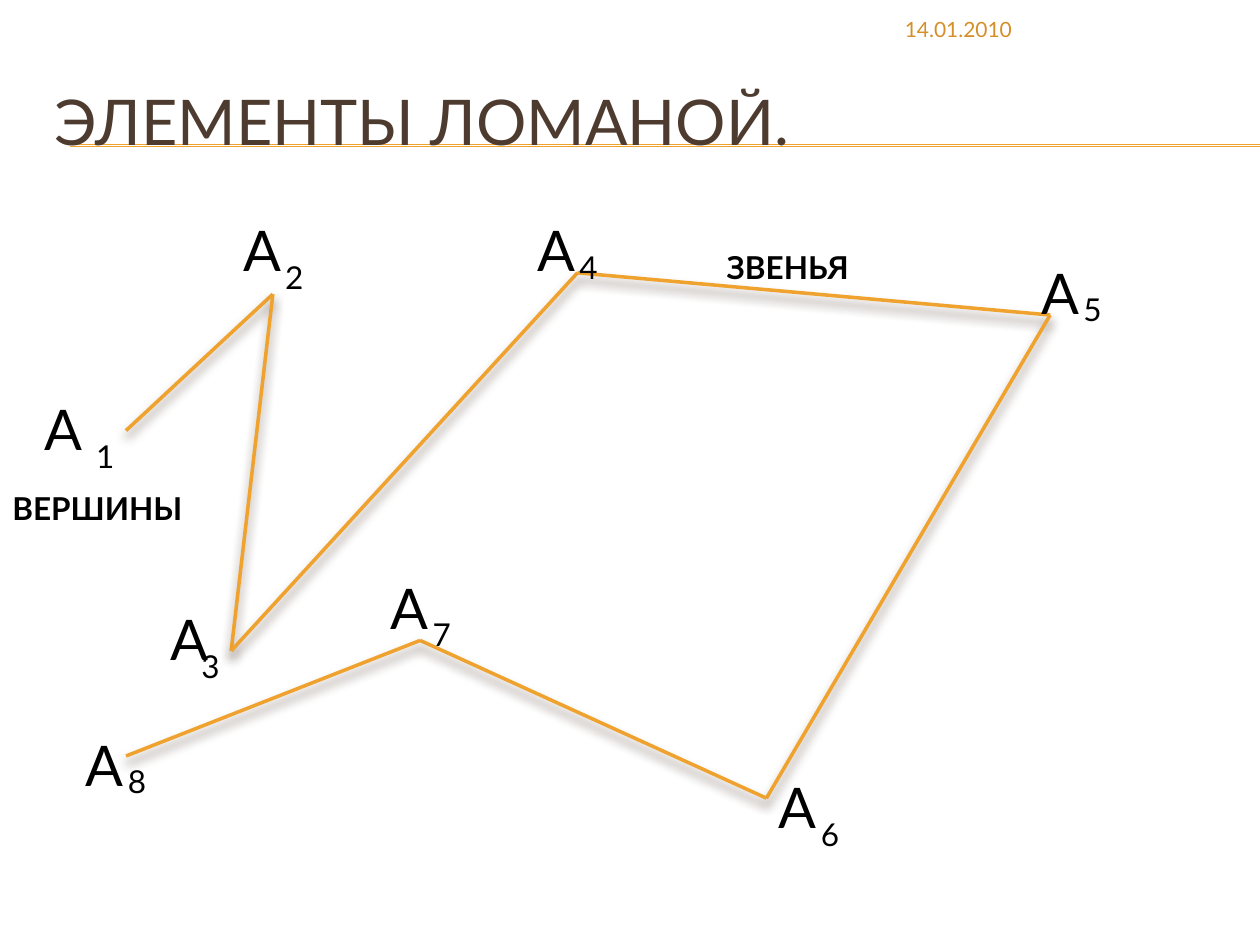
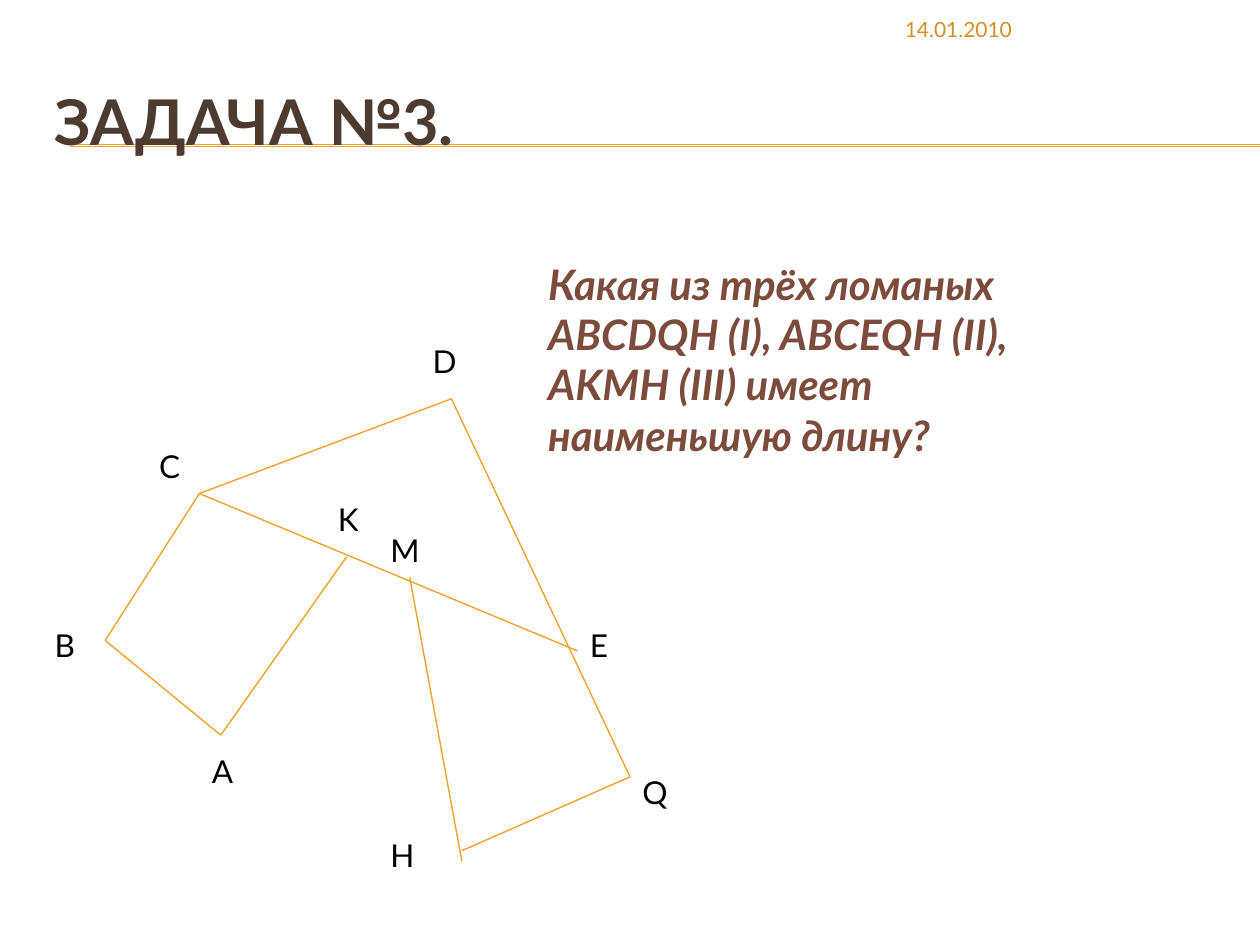
from itertools import pairwise

from lxml.etree import SubElement
from pptx import Presentation
from pptx.dml.color import RGBColor
from pptx.enum.shapes import MSO_CONNECTOR as Connector
from pptx.enum.text import MSO_ANCHOR as Anchor, MSO_AUTO_SIZE as AutoSize
from pptx.oxml.ns import qn
from pptx.util import Cm, Pt

FONT = "Lato"
ORANGE, DARK_ORANGE = "F0A22E", "D48F29"
BROWN, RED_BROWN, BLACK = "4E3B30", "7C4B3B", "000000"

DATE = "14.01.2010"
RULE_LEFT, RULE_RIGHT, RULE_HEIGHTS = 1.42, 25.4, (2.92, 2.95)

# name, vertex, letter corner, index corner, index width
POLYLINE = [
    ("1", (2.54, 8.68), (0.64, 7.83), (1.69, 8.68), 1.48),
    ("2", (5.5, 5.93), (4.66, 4.23), (5.5, 5.08), 1.69),
    ("3", (4.66, 13.12), (3.18, 12.07), (3.81, 12.91), 1.06),
    ("4", (11.64, 5.5), (10.58, 4.23), (11.43, 4.87), 1.27),
    ("5", (21.17, 6.35), (20.74, 5.08), (21.59, 5.72), 1.48),
    ("6", (15.45, 16.09), (15.45, 15.45), (16.3, 16.3), 1.91),
    ("7", (8.47, 12.91), (7.62, 11.43), (8.47, 12.28), 1.27),
    ("8", (2.54, 15.24), (1.48, 14.61), (2.33, 15.24), 1.48),
]
CAPTIONS = [("ЗВЕНЬЯ", 14.4, 4.87, 4.01), ("ВЕРШИНЫ", 0, 9.73, 4.65)]

TASK_POINTS = {
    "A": (4.45, 14.82), "B": (2.12, 12.91), "C": (4.02, 9.95),
    "D": (9.1, 8.04), "Q": (12.7, 15.66), "H": (9.31, 17.15),
    "H end": (9.31, 17.36), "M": (8.26, 11.64), "K": (6.99, 11.22),
    "E": (11.64, 13.12),
}
TASK_CHAINS = [("A", "B", "C", "D", "Q", "H"), ("H end", "M"), ("A", "K"), ("C", "E")]
TASK_LABELS = [
    ("A", 4.02, 15.03, 1.27), ("B", 0.85, 12.49, 1.27), ("C", 2.96, 8.89, 1.06),
    ("D", 8.47, 6.77, 1.27), ("E", 11.64, 12.49, 0.64), ("Q", 12.7, 15.45, 1.48),
    ("H", 7.62, 16.72, 1.48), ("M", 7.62, 10.58, 1.48), ("K", 6.56, 9.95, 0.85),
]
QUESTION = "Какая из трёх ломаных ABCDQH (I), ABCEQH (II), AKMH (III) имеет наименьшую длину?"


def rgb(value):
    return RGBColor.from_string(value)


def add_text(slide, text, left, top, width, height=1.02, size=18, color=BLACK,
             bold=False, italic=False, anchor=Anchor.TOP, grow=True):
    box = slide.shapes.add_textbox(Cm(left), Cm(top), Cm(width), Cm(height))
    frame = box.text_frame
    frame.word_wrap = True
    frame.auto_size = AutoSize.SHAPE_TO_FIT_TEXT if grow else AutoSize.NONE
    frame.vertical_anchor = anchor
    run = frame.paragraphs[0].add_run()
    run.text = text
    font = run.font
    font.name, font.size, font.bold, font.italic = FONT, Pt(size), bold, italic
    font.color.rgb = rgb(color)


def add_line(slide, start, end, width, shadow=False):
    ends = [Cm(value) for value in (*start, *end)]
    line = slide.shapes.add_connector(Connector.STRAIGHT, *ends)
    line.line.color.rgb = rgb(ORANGE)
    line.line.width = Pt(width)
    effects = SubElement(line._element.spPr, qn("a:effectLst"))
    if shadow:
        outer = SubElement(effects, qn("a:outerShdw"), blurRad=str(Pt(6)),
                           dist=str(Pt(4)), dir="5400000", rotWithShape="0")
        color = SubElement(outer, qn("a:srgbClr"), val=BROWN)
        SubElement(color, qn("a:alpha"), val="60000")


def add_chain(slide, points, width, shadow=False):
    for start, end in pairwise(points):
        add_line(slide, start, end, width, shadow)


def add_base_slide(presentation, title, bold=False):
    slide = presentation.slides.add_slide(presentation.slide_layouts[6])
    for height in RULE_HEIGHTS:
        add_line(slide, (RULE_LEFT, height), (RULE_RIGHT, height), 0.75)
    add_text(slide, title, 0.85, 1.27, 24.13, 2.33, 36, BROWN, bold,
             anchor=Anchor.MIDDLE, grow=False)
    add_text(slide, DATE, 17.99, 0.21, 6.99, 0.81, 12, DARK_ORANGE, grow=False)
    return slide


def build_elements_slide(presentation):
    slide = add_base_slide(presentation, "ЭЛЕМЕНТЫ ЛОМАНОЙ.")
    add_chain(slide, [vertex for _, vertex, *_ in POLYLINE], 2, shadow=True)
    for index, _, letter_corner, index_corner, index_width in POLYLINE:
        add_text(slide, "A", *letter_corner, 1.48, 1.63, 32)
        add_text(slide, index, *index_corner, index_width)
    for caption in CAPTIONS:
        add_text(slide, *caption, bold=True)


def build_task_slide(presentation):
    slide = add_base_slide(presentation, "ЗАДАЧА №3.", bold=True)
    for chain in TASK_CHAINS:
        add_chain(slide, [TASK_POINTS[name] for name in chain], 0.79)
    for label in TASK_LABELS:
        add_text(slide, *label)
    add_text(slide, QUESTION, 10.8, 5.08, 10.16, 5.38, 24, RED_BROWN, True, True)


def main():
    presentation = Presentation()
    presentation.slide_width, presentation.slide_height = Cm(25.4), Cm(19.05)
    build_elements_slide(presentation)
    build_task_slide(presentation)
    presentation.save("out.pptx")


if __name__ == "__main__":
    main()
